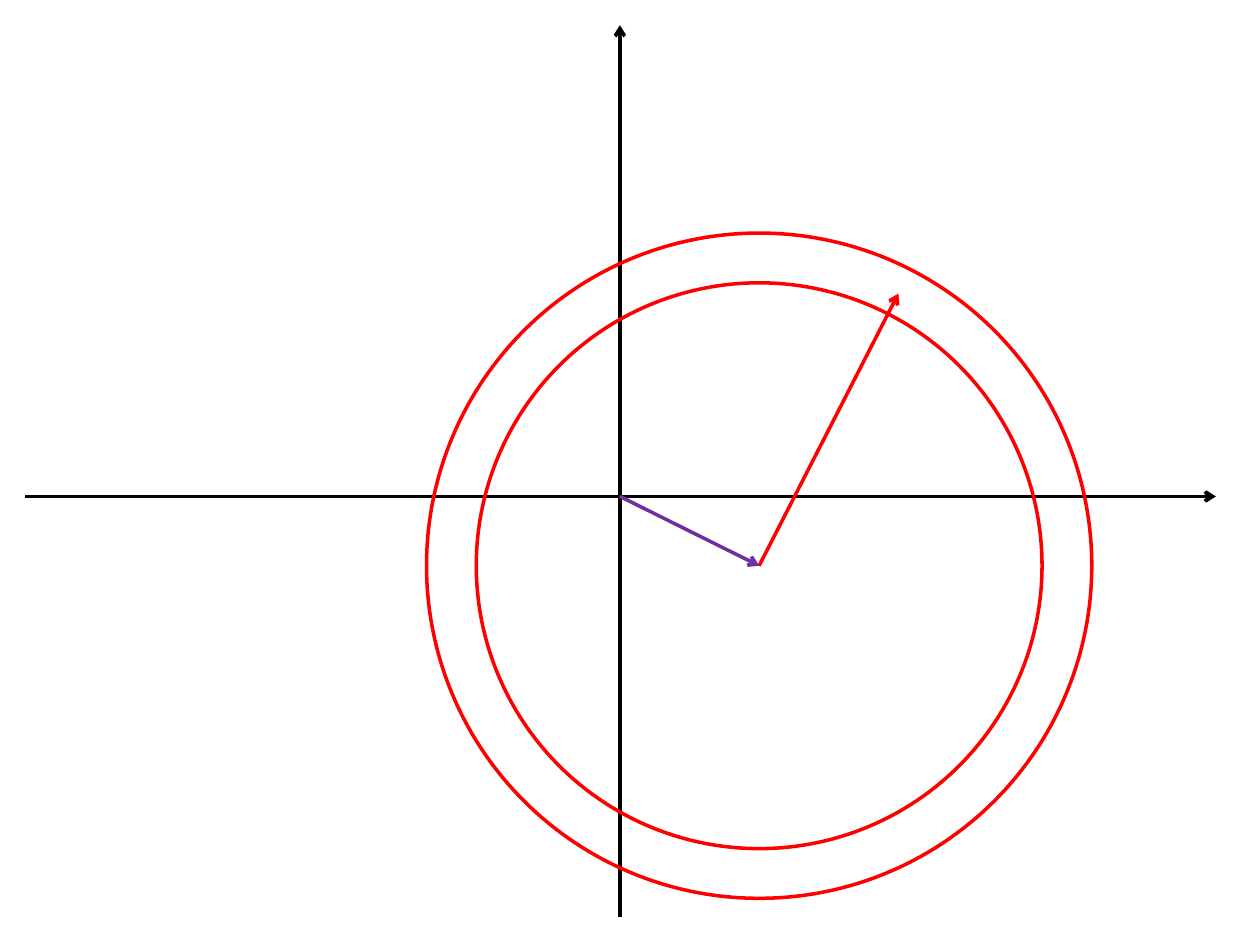
from lxml.etree import SubElement
from pptx import Presentation
from pptx.dml.color import RGBColor
from pptx.enum.shapes import MSO_CONNECTOR, MSO_SHAPE
from pptx.oxml.ns import qn
from pptx.util import Inches, Pt

COLOURS = {"axis": "000000", "circle": "FF0000", "offset": "7030A0"}

deck = Presentation()
deck.slide_width, deck.slide_height = Inches(10), Inches(7.5)
page = deck.slides.add_slide(deck.slide_layouts[6])

# Grid of 100 columns by 75 rows
column = deck.slide_width / 100
row = deck.slide_height / 75
origin = (49.2, 39.4)
centre = (60.25, 44.9)


def style_line(shape, colour):
    shape.line.color.rgb = RGBColor.from_string(COLOURS[colour])
    shape.line.width = Pt(2)


def add_arrow(shapes, start, end, colour):
    arrow = shapes.add_connector(
        MSO_CONNECTOR.STRAIGHT,
        round(start[0] * column), round(start[1] * row),
        round(end[0] * column), round(end[1] * row))
    style_line(arrow, colour)
    SubElement(arrow.line._get_or_add_ln(), qn("a:tailEnd"), type="arrow")
    SubElement(arrow._element.spPr, qn("a:effectLst"))


# Axes, crossing at the origin
axes = page.shapes.add_group_shape()
add_arrow(axes.shapes, (origin[0], 72.8), (origin[0], 2), "axis")
add_arrow(axes.shapes, (2, origin[1]), (96.5, origin[1]), "axis")

# Concentric circles
for radius in (26.4, 22.45):
    circle = page.shapes.add_shape(
        MSO_SHAPE.OVAL,
        round((centre[0] - radius) * column), round((centre[1] - radius) * row),
        round(2 * radius * column), round(2 * radius * row))
    circle.shadow.inherit = False
    circle.fill.background()
    style_line(circle, "circle")

# Offset from the origin to the centre, then the radius vector
add_arrow(page.shapes, origin, centre, "offset")
add_arrow(page.shapes, centre, (71.3, 23.3), "circle")

deck.save("out.pptx")
